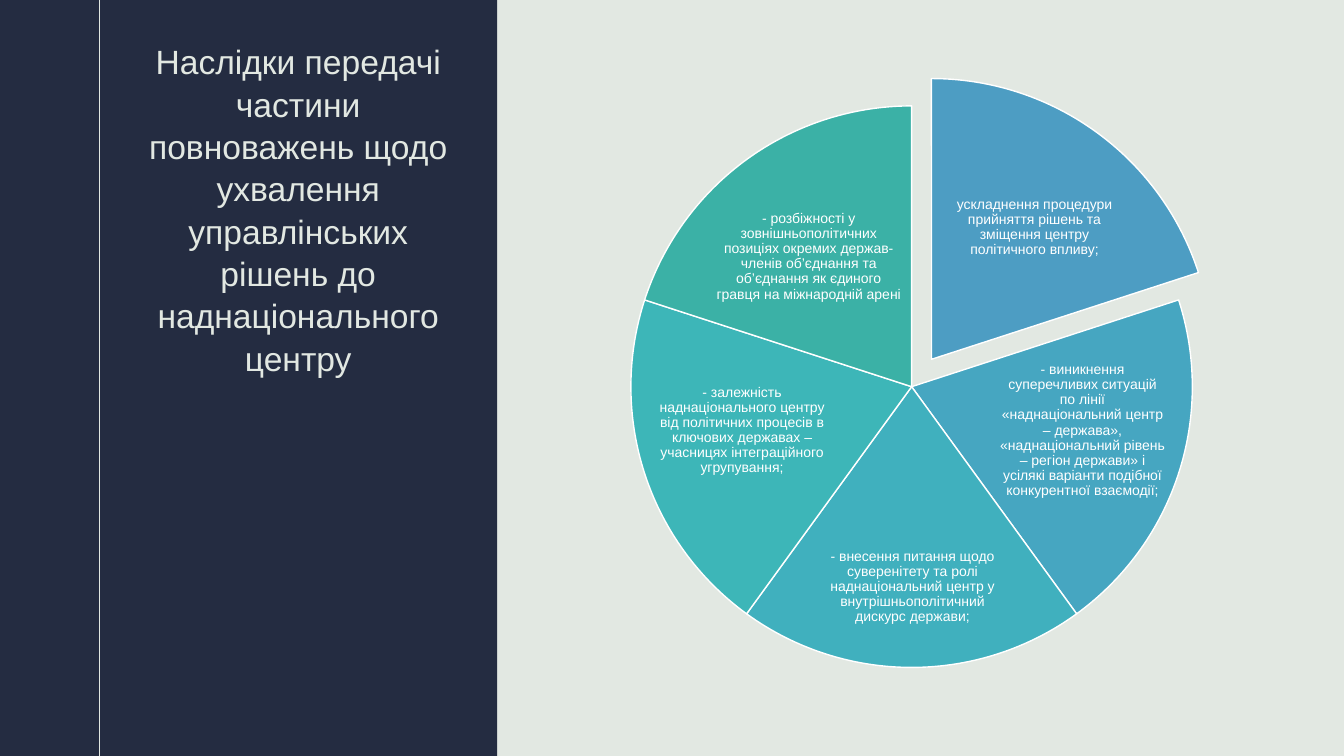
from dataclasses import dataclass

from lxml import etree
from pptx import Presentation
from pptx import util as u
from pptx.dml.color import RGBColor
from pptx.enum import shapes, text
from pptx.oxml.ns import qn


@dataclass(frozen=True)
class Theme:
    """Colours and type sizes of the slide."""
    light: str = "E2E8E2"
    dark: str = "242C41"
    white: str = "FFFFFF"
    slices: tuple = ("4D9DC3", "46A6C1", "40B0BE", "3DB6B8", "3BB1A6")
    font: str = "Arial"
    title_size: int = 24
    label_size: int = 10


class SlideBuilder:
    """Draws styled elements on one slide."""

    def __init__(self, slide, theme):
        self.slide = slide
        self.theme = theme
        self.paint(slide.background.fill, theme.light)

    def paint(self, fill, color):
        """Apply a solid colour to a fill."""
        fill.solid()
        fill.fore_color.rgb = RGBColor.from_string(color)

    def shape(self, kind, box, color, outline=None):
        """Add a flat preset shape."""
        shape = self.slide.shapes.add_shape(kind, *map(u.Cm, box))
        shape.shadow.inherit = False
        self.paint(shape.fill, color)
        if outline:
            self.paint(shape.line.fill, outline)
            shape.line.width = u.Pt(1)
        else:
            shape.line.fill.background()
        return shape

    def set_text(self, shape, wording, size, color, anchor, margin, spacing):
        """Put one centred paragraph in a shape."""
        frame = shape.text_frame
        frame.word_wrap = True
        frame.auto_size = text.MSO_AUTO_SIZE.NONE
        frame.vertical_anchor = anchor
        frame.margin_left = frame.margin_right = u.Cm(margin)
        frame.margin_top = frame.margin_bottom = u.Cm(margin)
        paragraph = frame.paragraphs[0]
        paragraph.alignment = text.PP_ALIGN.CENTER
        paragraph.line_spacing = spacing
        run = paragraph.add_run()
        run.text = wording
        run.font.name = self.theme.font
        run.font.size = u.Pt(size)
        run.font.color.rgb = RGBColor.from_string(color)
        return paragraph

    def title(self, wording, box):
        """Place and fill the title placeholder."""
        title = self.slide.shapes.title
        title.left, title.top, title.width, title.height = map(u.Cm, box)
        paragraph = self.set_text(title, wording, self.theme.title_size, self.theme.light,
                                  text.MSO_ANCHOR.TOP, 0, 1.05)
        paragraph.space_before = u.Pt(0)

    def panel(self, box):
        """Add the dark panel behind the title."""
        panel = self.shape(shapes.MSO_SHAPE.RECTANGLE, box, self.theme.dark)
        self.slide.shapes.title.element.addprevious(panel.element)

    def vertical_line(self, x, height):
        """Add a thin light line from the top edge."""
        line = self.slide.shapes.add_connector(
            shapes.MSO_CONNECTOR.STRAIGHT, u.Cm(x), 0, u.Cm(x), u.Cm(height))
        self.paint(line.line.fill, self.theme.light)
        line.line.width = u.Pt(0.75)
        etree.SubElement(line.element.spPr, qn("a:effectLst"))

    def pie_slice(self, box, start, end, color):
        """Add a pie slice between two angles in degrees."""
        pie = self.shape(shapes.MSO_SHAPE.PIE, box, color, self.theme.white)
        for index, degrees in enumerate((start, end)):
            pie.adjustments[index] = degrees % 360 * 0.6

    def label(self, wording, box):
        """Add a small centred label."""
        label = self.slide.shapes.add_textbox(*map(u.Cm, box))
        paragraph = self.set_text(label, wording, self.theme.label_size, self.theme.white,
                                  text.MSO_ANCHOR.MIDDLE, 0.03, 0.9)
        paragraph.space_after = u.Pt(3.5)


WIDTH, HEIGHT = 33.87, 19.05
PIE_LEFT, PIE_TOP, DIAMETER = 15.9, 2.67, 14.15
EXPLODED_SHIFT = (0.5, -0.69)
TITLE = ("Наслідки передачі частини повноважень щодо ухвалення "
         "управлінських рішень до наднаціонального центру")
LABELS = [
    ("ускладнення процедури прийняття рішень та зміщення центру політичного впливу;",
     (23.67, 4.09, 4.8, 3.28)),
    ("- виникнення суперечливих ситуацій по лінії «наднаціональний центр – держава», "
     "«наднаціональний рівень – регіон держави» і усілякі варіанти подібної "
     "конкурентної взаємодії;",
     (25.17, 9.07, 4.22, 3.56)),
    ("- внесення питання щодо суверенітету та ролі наднаціональний центр у "
     "внутрішньополітичний дискурс держави;",
     (20.47, 13.28, 5.05, 3.02)),
    ("- залежність наднаціонального центру від політичних процесів в ключових "
     "державах – учасницях інтеграційного угрупування;",
     (16.59, 9.07, 4.22, 3.56)),
    ("- розбіжності у зовнішньополітичних позиціях окремих держав-членів об’єднання "
     "та об’єднання як єдиного гравця на міжнародній арені",
     (17.98, 4.83, 4.8, 3.28)),
]


def main():
    """Build and save the slide."""
    presentation = Presentation()
    presentation.slide_width = u.Cm(WIDTH)
    presentation.slide_height = u.Cm(HEIGHT)
    theme = Theme()
    builder = SlideBuilder(
        presentation.slides.add_slide(presentation.slide_layouts[5]), theme)
    builder.panel((0, 0, 12.53, HEIGHT))
    builder.title(TITLE, (3.73, 0.99, 7.57, 16.92))
    builder.vertical_line(2.5, HEIGHT)
    sweep = 360 / len(LABELS)
    for index, (wording, box) in enumerate(LABELS):
        shift_x, shift_y = EXPLODED_SHIFT if index == 0 else (0, 0)
        start = 270 + index * sweep
        builder.pie_slice((PIE_LEFT + shift_x, PIE_TOP + shift_y, DIAMETER, DIAMETER),
                          start, start + sweep, theme.slices[index])
        builder.label(wording, box)
    presentation.save("out.pptx")


if __name__ == "__main__":
    main()
